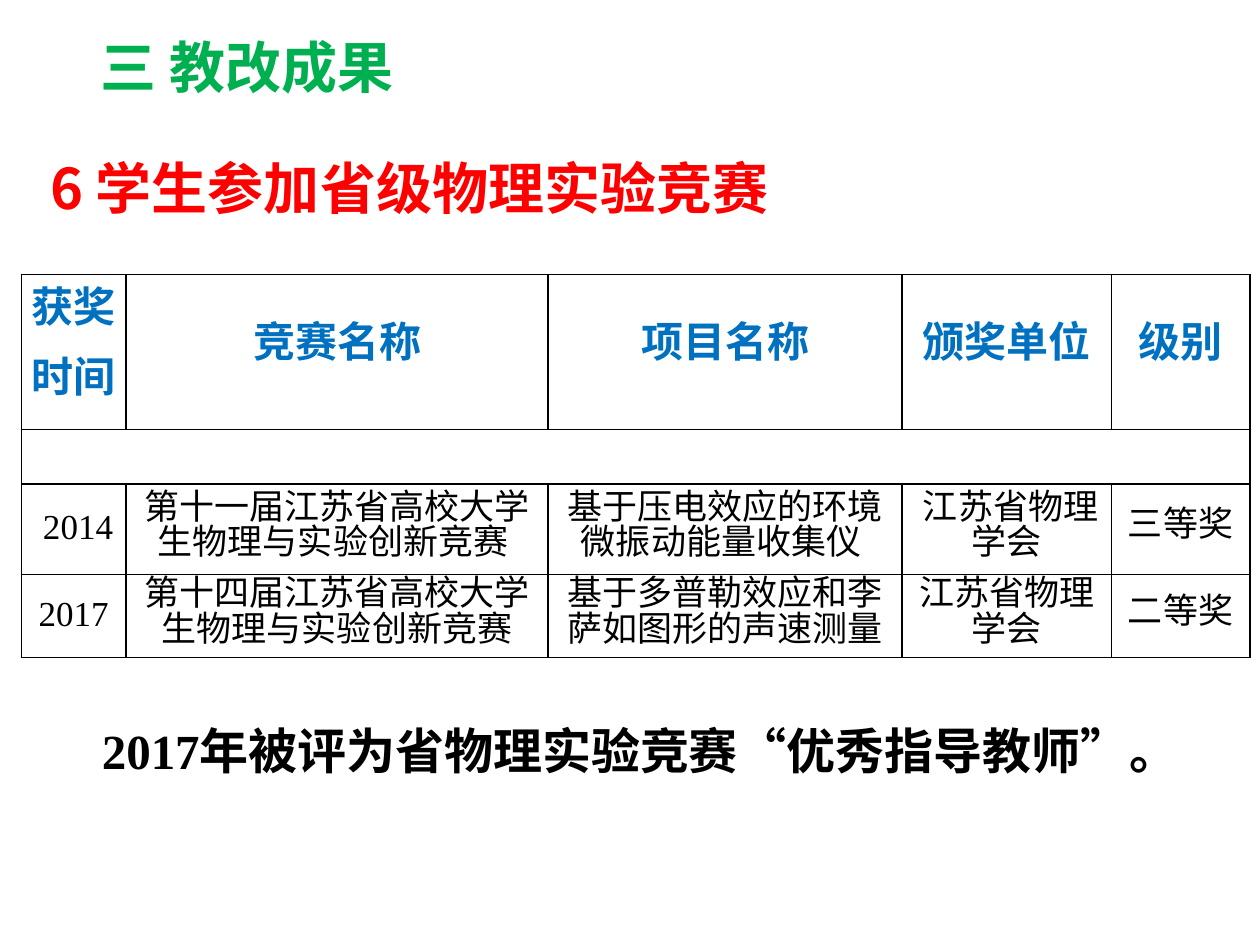
from pptx import Presentation
from pptx.dml.color import RGBColor
from pptx.enum.text import MSO_ANCHOR, MSO_AUTO_SIZE, PP_ALIGN
from pptx.oxml import parse_xml
from pptx.oxml.ns import nsdecls, qn
from pptx.util import Inches, Pt

LEFT, CENTER = PP_ALIGN.LEFT, PP_ALIGN.CENTER
TOP, MIDDLE = MSO_ANCHOR.TOP, MSO_ANCHOR.MIDDLE
GROW = MSO_AUTO_SIZE.SHAPE_TO_FIT_TEXT

GREEN = RGBColor(0x00, 0xB0, 0x50)
RED = RGBColor(0xFF, 0x00, 0x00)
BLUE = RGBColor(0x00, 0x70, 0xC0)
BLACK = RGBColor(0x00, 0x00, 0x00)
SANS, SERIF = "Noto Sans CJK SC", "Times New Roman"

HEAD = dict(name=SANS, size=Pt(24), bold=True)
BODY = dict(name=SANS, size=Pt(20), bold=False)
YEAR = dict(BODY, name=SERIF)
LARGE = dict(name=SANS, size=Pt(32), bold=True)
NOTE = dict(name=SERIF, size=Pt(28), bold=True)

COLS = [0.83, 3.35, 2.81, 1.66, 1.1]
ROWS = [1.23, 0.43, 0.72, 0.66]
HEADS = ["获奖\n时间", "竞赛名称", "项目名称", "颁奖单位", "级别"]
PRIZES = [
    [" 2014", "第十一届江苏省高校大学生物理与实验创新竞赛 ",
     "基于压电效应的环境微振动能量收集仪 ", " 江苏省物理学会", "三等奖"],
    ["2017", "第十四届江苏省高校大学生物理与实验创新竞赛",
     "基于多普勒效应和李萨如图形的声速测量", "江苏省物理学会", "二等奖"],
]


def write(frame, text, style, color, align=LEFT, line=None):
    """Fill a text frame, one paragraph for each line of text."""
    for i, words in enumerate(text.split("\n")):
        para = frame.add_paragraph() if i else frame.paragraphs[0]
        para.alignment = align
        if line:
            para.line_spacing = line
        if i:
            para.space_before = Pt(20)
        run = para.add_run()
        run.text = words
        for key, value in style.items():
            setattr(run.font, key, value)
        run.font.color.rgb = color
        # East Asian letters take the sans face
        run.font._element.append(
            parse_xml(f'<a:ea {nsdecls("a")} typeface="{SANS}"/>'))


def fit(shape, box, wrap):
    """Place a text shape in its box."""
    shape.left, shape.top, shape.width, shape.height = map(Inches, box)
    frame = shape.text_frame
    frame.word_wrap = wrap
    frame.auto_size = GROW
    frame.vertical_anchor = TOP
    return frame


def add_title(slide, box):
    write(fit(slide.shapes.title, box, True), "三 教改成果", LARGE, GREEN)


def add_text(slide, box, text, style, color, line=None):
    shape = slide.shapes.add_textbox(*map(Inches, box))
    write(fit(shape, box, False), text, style, color, line=line)


def edge(cell):
    """Clear the fill and draw thin black borders."""
    props = cell._tc.get_or_add_tcPr()
    cell.fill.background()
    for i, side in enumerate(("lnL", "lnR", "lnT", "lnB")):
        props.insert(i, parse_xml(
            f'<a:{side} {nsdecls("a")} w="{Pt(1)}"><a:solidFill>'
            f'<a:srgbClr val="{BLACK}"/></a:solidFill></a:{side}>'))


def add_prizes(slide, box):
    table = slide.shapes.add_table(
        len(ROWS), len(COLS), *map(Inches, box)).table
    table.first_row = table.horz_banding = False
    for col, width in zip(table.columns, COLS):
        col.width = Inches(width)
    for row, height in zip(table.rows, ROWS):
        row.height = Inches(height)

    for cell in table.iter_cells():
        edge(cell)
        cell.vertical_anchor = MIDDLE
        cell.margin_left = cell.margin_right = Inches(0.08)
        cell.margin_top = cell.margin_bottom = Inches(0.05)

    # Empty band under the heads
    table.cell(1, 0).merge(table.cell(1, len(COLS) - 1))

    for r, texts in zip((0, 2, 3), [HEADS] + PRIZES):
        for c, text in enumerate(texts):
            style = HEAD if r == 0 else BODY if c else YEAR
            color = BLACK if r else BLUE
            write(table.cell(r, c).text_frame, text, style, color,
                  CENTER, Pt(20))


def main():
    deck = Presentation()
    deck.slide_width, deck.slide_height = Inches(10), Inches(7.5)
    slide = deck.slides.add_slide(deck.slide_layouts[5])
    add_title(slide, (0.7, 0.21, 3.05, 0.64))
    add_text(slide, (0.3, 1.17, 6.06, 0.64),
             "6 学生参加省级物理实验竞赛", LARGE, RED)
    add_prizes(slide, (0.17, 2.18, sum(COLS), sum(ROWS)))
    add_text(slide, (0.71, 5.58, 8.88, 0.66),
             "2017年被评为省物理实验竞赛“优秀指导教师”。",
             NOTE, BLACK, Pt(40))
    deck.save("out.pptx")


if __name__ == "__main__":
    main()
